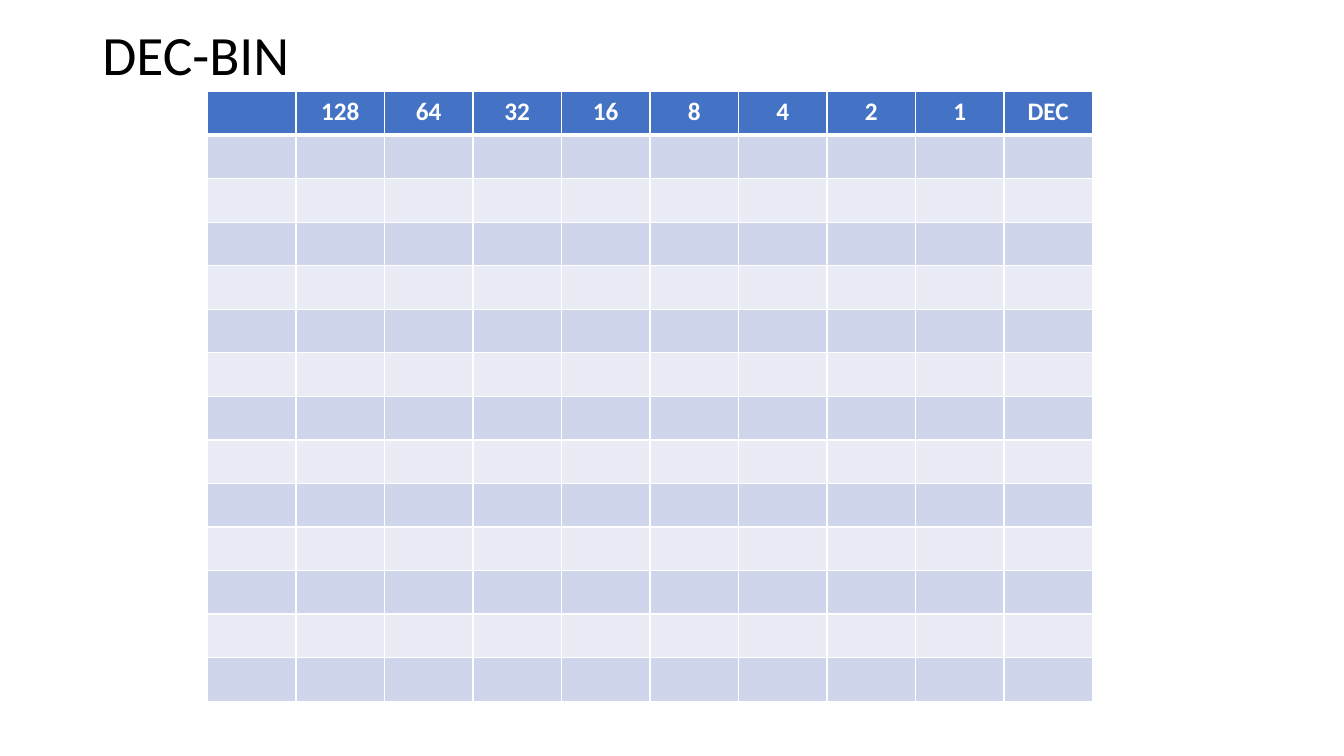
from lxml.etree import SubElement
from pptx import Presentation
from pptx.dml.color import RGBColor
from pptx.enum.text import MSO_ANCHOR as Anchor, PP_ALIGN as Align
from pptx.oxml.ns import qn
from pptx.util import Cm, Pt

TITLE = "DEC-BIN"
HEADINGS = ["", "128", "64", "32", "16", "8", "4", "2", "1", "DEC"]
EMPTY_ROWS = 13
FONT = "Calibri"

BLACK = RGBColor(0x00, 0x00, 0x00)
WHITE = RGBColor(0xFF, 0xFF, 0xFF)
HEADER_BLUE = RGBColor(0x44, 0x72, 0xC4)
BANDS = [RGBColor(0xE9, 0xEB, 0xF5), RGBColor(0xCF, 0xD5, 0xEA)]

TABLE_LEFT, TABLE_TOP = Cm(5.23), Cm(2.31)
TABLE_WIDTH, TABLE_HEIGHT = Cm(22.3), Cm(15.37)
THIN, THICK = Pt(1), Pt(3)


def write(frame, text, size, color, bold=False, align=Align.LEFT, spacing=1.0):
    para = frame.paragraphs[0]
    para.alignment = align
    para.line_spacing = spacing
    span = para.add_run()
    span.text = text
    span.font.name = FONT
    span.font.size = Pt(size)
    span.font.bold = bold
    span.font.color.rgb = color


def add_borders(cell, top, bottom):
    properties = cell._tc.get_or_add_tcPr()
    for side, width in (("L", THIN), ("R", THIN), ("T", top), ("B", bottom)):
        line = SubElement(properties, qn(f"a:ln{side}"), w=str(width))
        fill = SubElement(line, qn("a:solidFill"))
        SubElement(fill, qn("a:srgbClr"), val=str(WHITE))


def add_title(page):
    box = page.shapes.add_textbox(Cm(2.33), Cm(0.61), Cm(29.21), Cm(1.7))
    frame = box.text_frame
    frame.word_wrap = True
    frame.vertical_anchor = Anchor.MIDDLE
    write(frame, TITLE, size=39.6, color=BLACK, spacing=0.9)


def add_bit_table(page):
    row_count, column_count = EMPTY_ROWS + 1, len(HEADINGS)
    table = page.shapes.add_table(row_count, column_count, TABLE_LEFT, TABLE_TOP,
                                  TABLE_WIDTH, TABLE_HEIGHT).table
    for column in table.columns:
        column.width = TABLE_WIDTH // column_count
    for index, row in enumerate(table.rows):
        row.height = TABLE_HEIGHT // row_count
        for cell in row.cells:
            add_borders(cell, top=THICK if index == 1 else THIN,
                        bottom=THICK if index == 0 else THIN)
            cell.fill.solid()
            cell.fill.fore_color.rgb = BANDS[index % 2] if index else HEADER_BLUE
    for cell, heading in zip(table.rows[0].cells, HEADINGS):
        if heading:
            write(cell.text_frame, heading, size=18, color=WHITE, bold=True,
                  align=Align.CENTER)


def main():
    deck = Presentation()
    deck.slide_width, deck.slide_height = Cm(33.87), Cm(19.05)
    page = deck.slides.add_slide(deck.slide_layouts[6])
    add_title(page)
    add_bit_table(page)
    deck.save("out.pptx")


if __name__ == "__main__":
    main()
